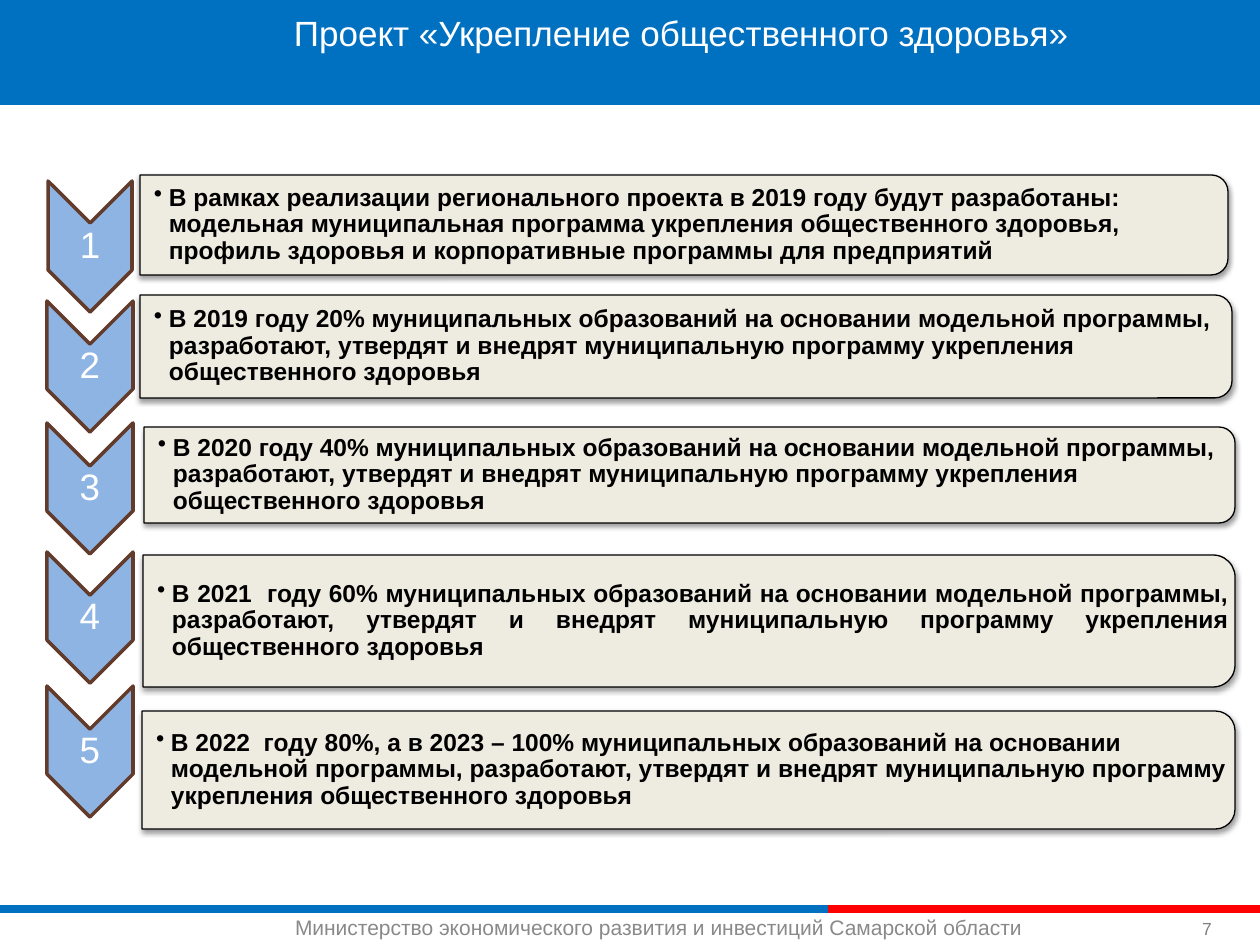
import dataclasses

import pptx
import pptx.dml.color
import pptx.enum.shapes
import pptx.enum.text
import pptx.oxml
import pptx.oxml.ns
import pptx.util

EMU_PER_PX = 914400 / 126
SHAPES = pptx.enum.shapes.MSO_SHAPE
ALIGN = pptx.enum.text.PP_ALIGN
ANCHOR = pptx.enum.text.MSO_ANCHOR
NAMESPACE = pptx.oxml.ns.nsdecls("a")
SHADOW = (
    f'<a:effectLst {NAMESPACE}><a:outerShdw blurRad="39370" dist="20320" dir="5400000" '
    'rotWithShape="0"><a:srgbClr val="000000"><a:alpha val="38000"/></a:srgbClr>'
    "</a:outerShdw></a:effectLst>"
)


@dataclasses.dataclass(frozen=True)
class Area:
    left: int
    top: int
    width: int
    height: int


@dataclasses.dataclass(frozen=True)
class Step:
    text: str
    chevron: Area
    panel: Area
    align: ALIGN = ALIGN.LEFT


GOAL = ("муниципальных образований на основании модельной программы, разработают, "
        "утвердят и внедрят муниципальную программу укрепления общественного здоровья")
STEPS = [
    Step("В рамках реализации регионального проекта в 2019 году будут разработаны: "
         "модельная муниципальная программа укрепления общественного здоровья, "
         "профиль здоровья и корпоративные программы для предприятий",
         Area(48, 181, 84, 131), Area(140, 175, 1088, 100)),
    Step(f"В 2019 году 20% {GOAL}", Area(47, 301, 86, 131), Area(140, 295, 1092, 103)),
    Step(f"В 2020 году 40% {GOAL}", Area(47, 423, 86, 131), Area(144, 427, 1091, 96)),
    Step(f"В 2021  году 60% {GOAL}", Area(47, 552, 86, 131), Area(143, 555, 1092, 132),
         ALIGN.JUSTIFY),
    Step(f"В 2022  году 80%, а в 2023 – 100% {GOAL}",
         Area(47, 686, 86, 131), Area(142, 711, 1093, 118)),
]


def px(value: float) -> pptx.util.Emu:
    return pptx.util.Emu(round(value * EMU_PER_PX))


def color(value: str) -> pptx.dml.color.RGBColor:
    return pptx.dml.color.RGBColor.from_string(value)


def place(area: Area) -> tuple:
    return px(area.left), px(area.top), px(area.width), px(area.height)


def add_box(page, kind, area: Area, fill: str, line: str = "", weight: float = 0,
            turned: bool = False, shadow: bool = False):
    if turned:
        shift = (area.width - area.height) / 2
        area = Area(area.left + shift, area.top - shift, area.height, area.width)
    box = page.shapes.add_shape(kind, *place(area))
    box.rotation = 90 if turned else 0
    box.fill.solid()
    box.fill.fore_color.rgb = color(fill)
    if line:
        box.line.color.rgb = color(line)
        box.line.width = pptx.util.Pt(weight)
    else:
        box.line.fill.background()
    if shadow:
        box._element.spPr.append(pptx.oxml.parse_xml(SHADOW))
    else:
        box.shadow.inherit = False
    return box


def add_text(page, text: str, area: Area, *, size: int, fill: str, bold: bool = False,
             align=ALIGN.LEFT, anchor=ANCHOR.TOP, margins: tuple = (13, 6, 13, 6),
             spacing: float = 1, bullet: bool = False):
    box = page.shapes.add_textbox(*place(area))
    frame = box.text_frame
    frame.word_wrap = True
    frame.vertical_anchor = anchor
    (frame.margin_left, frame.margin_top,
     frame.margin_right, frame.margin_bottom) = map(px, margins)
    para = frame.paragraphs[0]
    para.alignment = align
    para.line_spacing = spacing
    if bullet:
        properties = para._p.get_or_add_pPr()
        properties.set("marL", str(px(15)))
        properties.set("indent", str(-px(15)))
        properties.append(pptx.oxml.parse_xml(f'<a:buChar {NAMESPACE} char="•"/>'))
    span = para.add_run()
    span.text = text
    span.font.name = "Arial"
    span.font.size = pptx.util.Pt(size)
    span.font.bold = bold
    span.font.color.rgb = color(fill)
    return box


def add_rule(page, start: int, end: int, y: int, fill: str):
    rule = page.shapes.add_connector(
        pptx.enum.shapes.MSO_CONNECTOR.STRAIGHT, px(start), px(y), px(end), px(y))
    rule.line.color.rgb = color(fill)
    rule.line.width = pptx.util.Pt(5)
    rule._element.spPr.append(pptx.oxml.parse_xml(f"<a:effectLst {NAMESPACE}/>"))


def add_step(page, number: int, step: Step):
    add_box(page, SHAPES.CHEVRON, step.chevron, "8EB4E3", "623B2A", 2, turned=True)
    add_text(page, str(number), step.chevron, size=21, fill="FFFFFF", align=ALIGN.CENTER,
             anchor=ANCHOR.MIDDLE, margins=(1, 1, 1, 1), spacing=0.9)
    panel = step.panel
    add_box(page, SHAPES.ROUND_2_SAME_RECTANGLE, panel, "EEECE1", "000000", 0.75,
            turned=True, shadow=True)
    inner = Area(panel.left, panel.top + 5, panel.width - 5, panel.height - 10)
    add_text(page, step.text, inner, size=14, fill="000000", bold=True, align=step.align,
             anchor=ANCHOR.MIDDLE, margins=(14, 1, 1, 1), spacing=0.9, bullet=True)


def main():
    deck = pptx.Presentation()
    deck.slide_width, deck.slide_height = px(1260), px(945)
    page = deck.slides.add_slide(deck.slide_layouts[6])

    add_rule(page, 0, 828, 909, "0070C1")
    add_rule(page, 828, 1260, 909, "FF0000")
    add_text(page, "Министерство экономического развития и инвестиций Самарской области",
             Area(282, 909, 824, 36), size=12, fill="898989")
    add_text(page, "7", Area(1189, 895, 71, 50), size=10, fill="808080",
             anchor=ANCHOR.BOTTOM)
    add_box(page, SHAPES.RECTANGLE, Area(0, 0, 1260, 105), "0070C1")
    add_text(page, "Проект «Укрепление общественного здоровья»",
             Area(107, 5, 1149, 55), size=20, fill="FFFFFF", align=ALIGN.CENTER)

    for number, step in enumerate(STEPS, 1):
        add_step(page, number, step)

    deck.save("out.pptx")


if __name__ == "__main__":
    main()
